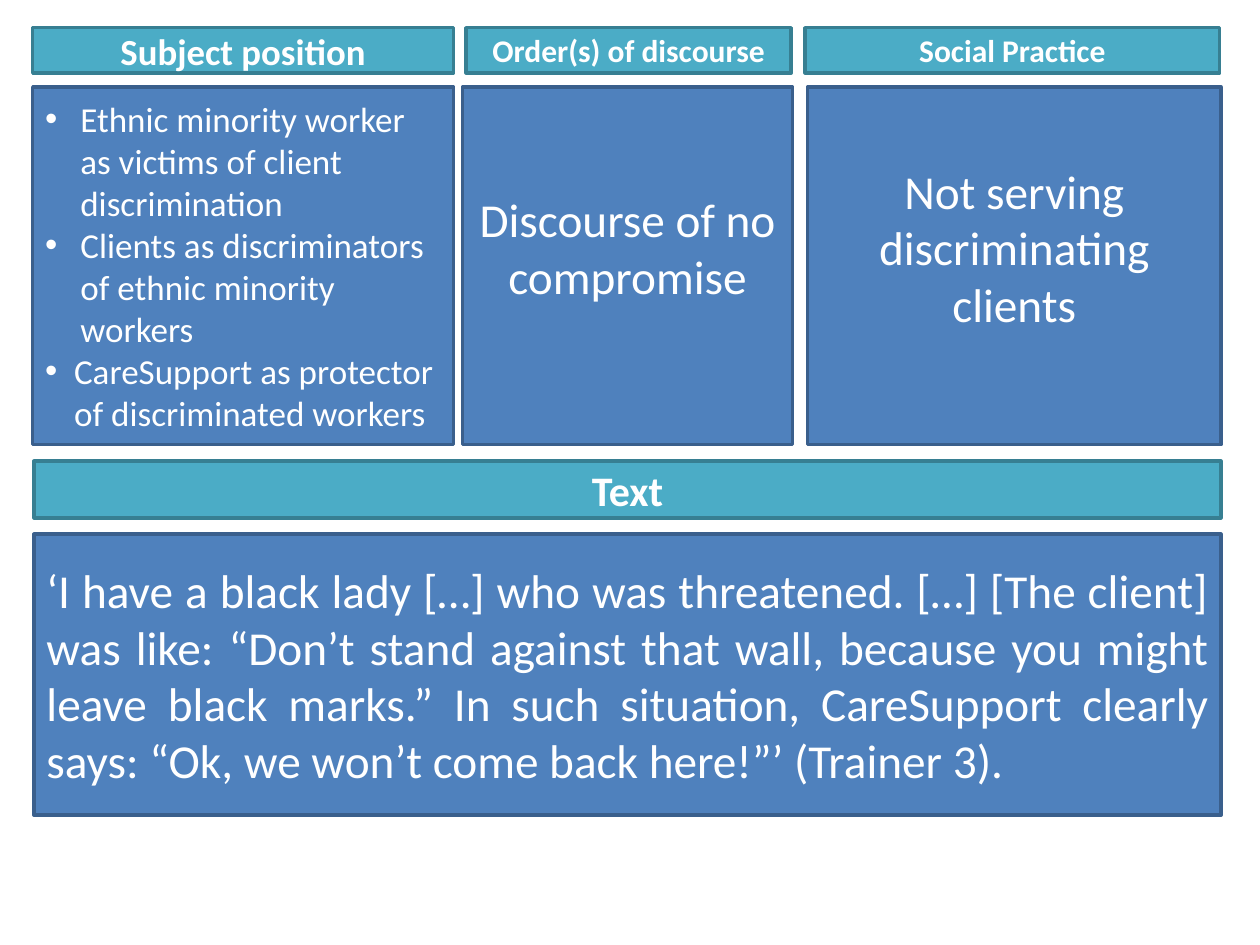
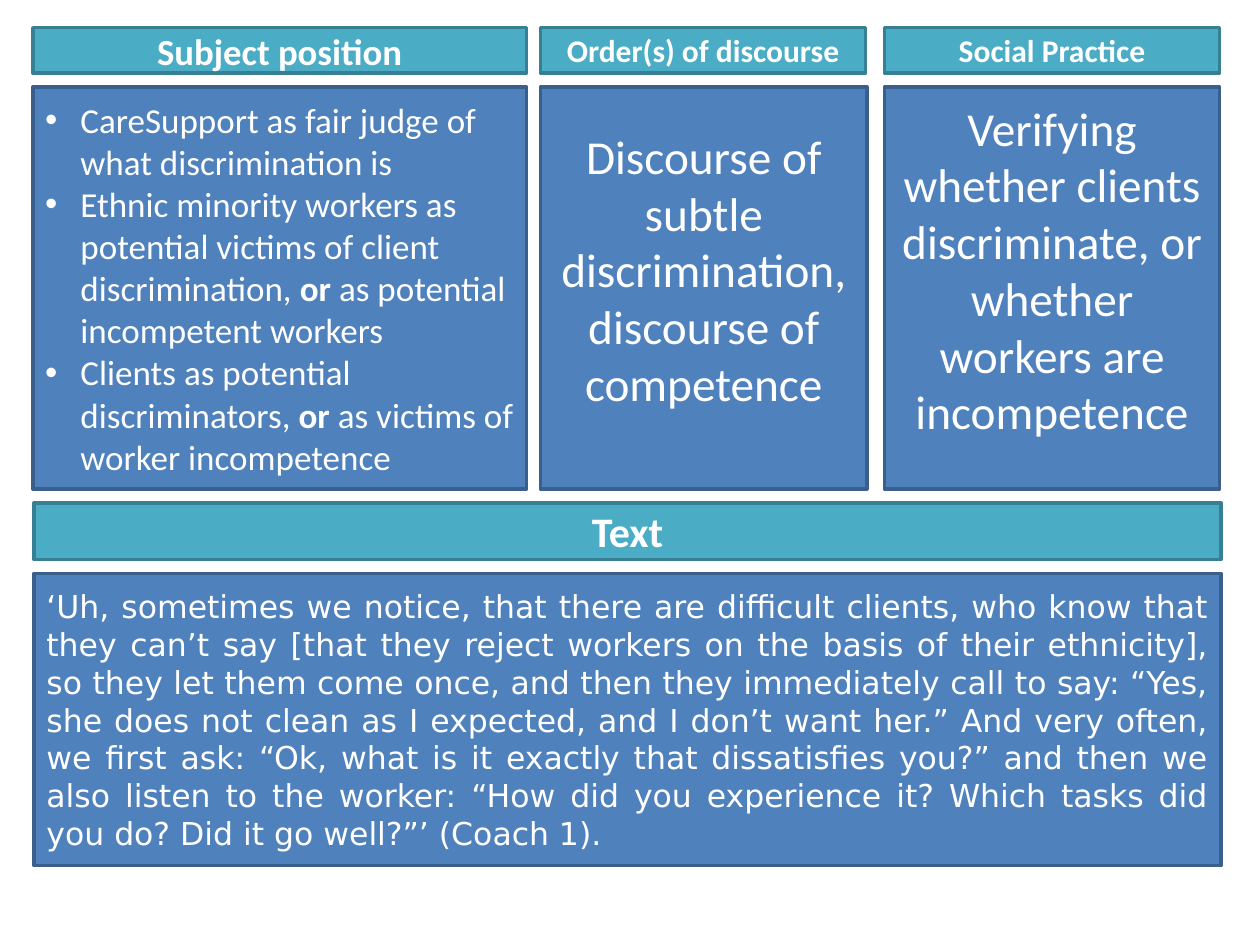
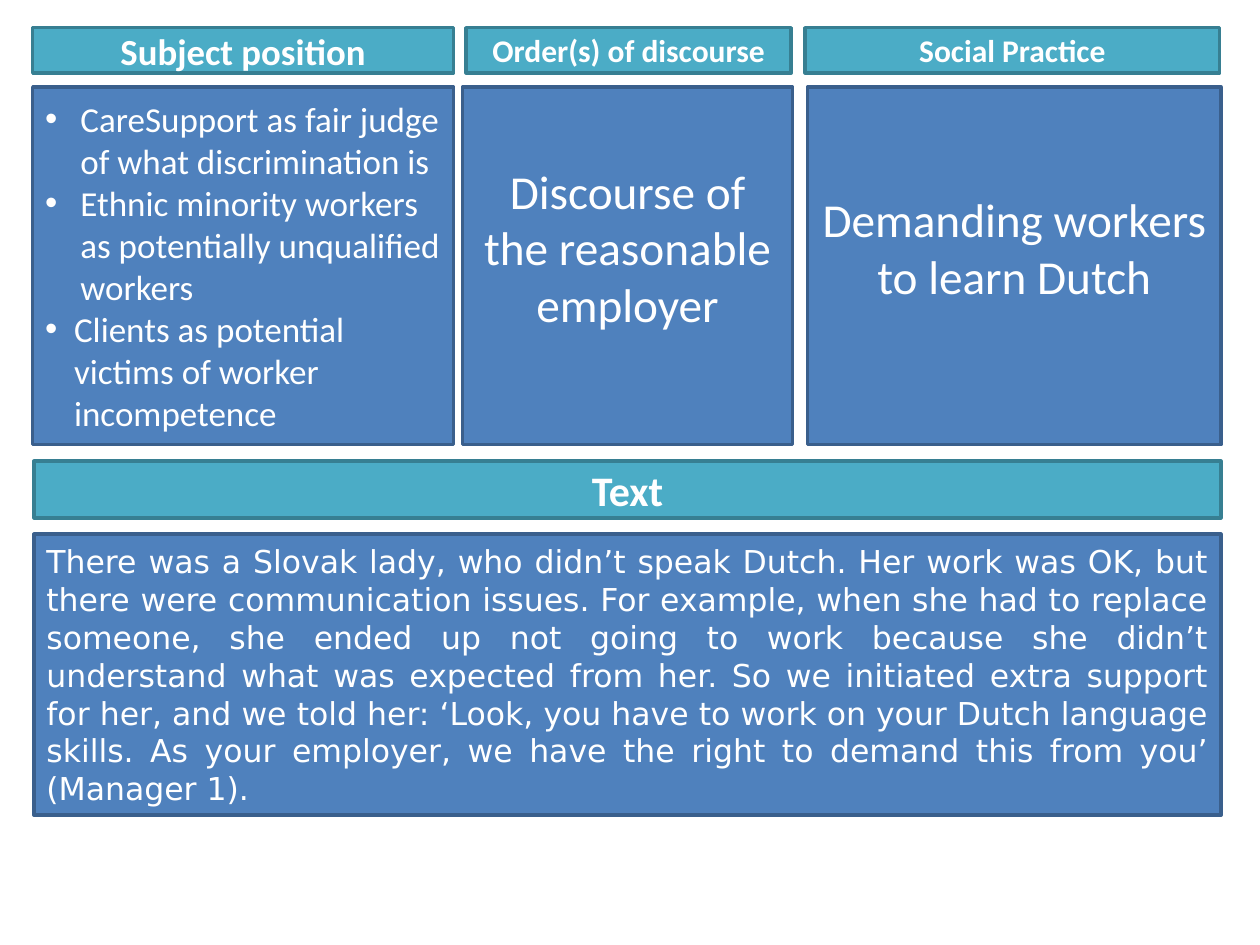
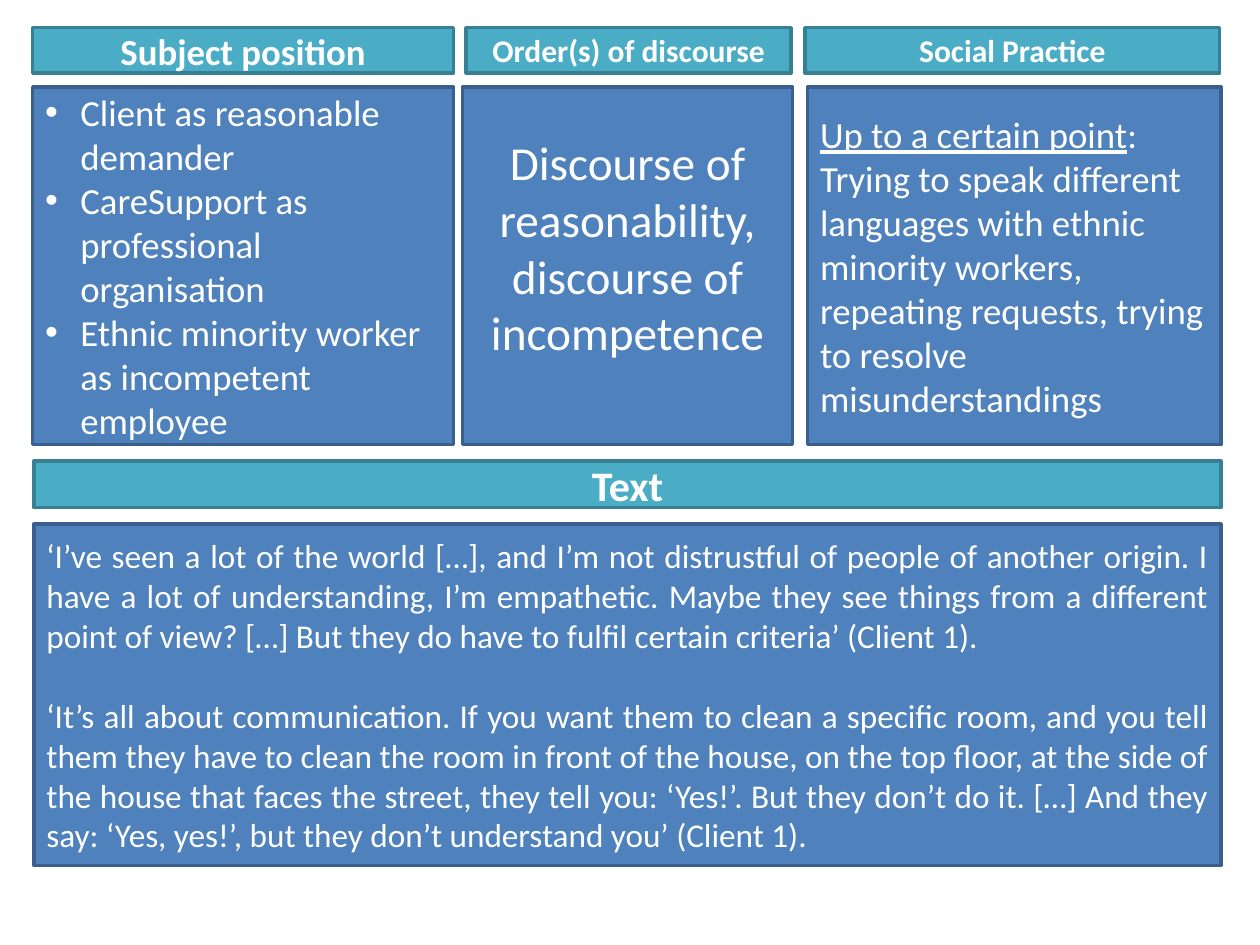
"""Build four slides that set subject positions beside discourse, practice and quotes."""
from dataclasses import dataclass

from lxml.etree import SubElement
from pptx import Presentation
from pptx.dml.color import RGBColor
from pptx.enum.shapes import MSO_SHAPE
from pptx.enum.text import MSO_ANCHOR, PP_ALIGN
from pptx.oxml.ns import qn
from pptx.util import Inches, Pt


@dataclass(frozen=True)
class Theme:
    white: str = "FFFFFF"
    blue: tuple = ("4F81BD", "3A5F8C")
    teal: tuple = ("4BACC6", "377F92")
    font: str = "Calibri"
    plain: str = "DejaVu Sans"
    line: float = 2
    small: int = 18
    dense: int = 19
    point: int = 20
    mid: int = 21
    big: int = 27
    bar: int = 24
    heads: tuple = (21, 18, 18)
    lift: float = 0.35


@dataclass(frozen=True)
class Grid:
    heads: tuple
    cells: tuple
    deep: float
    bar: tuple
    quote: tuple


HEADS = ("Subject position", "Order(s) of discourse", "Social Practice")
TOP, HIGH, BODY = 0.22, 0.36, 0.69
LEFT, WIDE = 0.27, 9.42
HANG, TIGHT = 0.28, 0.23

BASE = Grid(
    heads=((0.26, 3.34), (3.7, 2.58), (6.39, 3.29)),
    cells=((0.26, 3.34), (3.67, 2.62), (6.41, 3.28)),
    deep=2.84, bar=(3.66, 0.45), quote=(4.24, 2.23))
BROAD = Grid(
    heads=((0.26, 3.92), (4.29, 2.58), (7.02, 2.66)),
    cells=((0.26, 3.92), (4.29, 2.59), (7.02, 2.66)),
    deep=3.19, bar=(3.99, 0.45), quote=(4.55, 2.32))
LONG = Grid(BASE.heads, BASE.cells, BASE.deep, bar=(3.66, 0.37), quote=(4.16, 2.71))


class Deck:
    def __init__(self, theme):
        self.theme = theme
        self.show = Presentation()
        self.show.slide_width = Inches(10)
        self.show.slide_height = Inches(7.5)
        self.slide = None

    def start(self, grid):
        self.grid = grid
        self.slide = self.show.slides.add_slide(self.show.slide_layouts[6])
        for (left, wide), text, size in zip(grid.heads, HEADS, self.theme.heads):
            self.label(left, TOP, wide, HIGH, text, size)
        top, high = grid.bar
        self.label(LEFT, top, WIDE, high, "Text", self.theme.bar)

    def box(self, left, top, wide, high, tone):
        shape = self.slide.shapes.add_shape(
            MSO_SHAPE.RECTANGLE, Inches(left), Inches(top), Inches(wide), Inches(high))
        shape.shadow.inherit = False
        fill, edge = tone
        shape.fill.solid()
        shape.fill.fore_color.rgb = RGBColor.from_string(fill)
        shape.line.color.rgb = RGBColor.from_string(edge)
        shape.line.width = Pt(self.theme.line)
        frame = shape.text_frame
        frame.word_wrap = True
        frame.vertical_anchor = MSO_ANCHOR.MIDDLE
        return frame

    def put(self, frame, paras, size, align, font=None, bold=False, gap=0):
        for i, runs in enumerate(paras):
            para = frame.add_paragraph() if i else frame.paragraphs[0]
            para.alignment = align
            if i and gap:
                para.space_before = Pt(gap)
            for part in [runs] if isinstance(runs, str) else runs:
                text, mark = (part, "") if isinstance(part, str) else part
                run = para.add_run()
                run.text = text
                run.font.size = Pt(size)
                run.font.name = font or self.theme.font
                run.font.color.rgb = RGBColor.from_string(self.theme.white)
                run.font.bold = bold or mark == "bold"
                run.font.underline = mark == "under"

    def label(self, left, top, wide, high, text, size):
        frame = self.box(left, top, wide, high, self.theme.teal)
        self.put(frame, [text], size, PP_ALIGN.CENTER, bold=True)

    def cell(self, col):
        left, wide = self.grid.cells[col]
        return self.box(left, BODY, wide, self.grid.deep, self.theme.blue)

    def points(self, paras, size=None, last=HANG):
        frame = self.cell(0)
        self.put(frame, paras, size or self.theme.point, PP_ALIGN.LEFT)
        for para, hang in zip(frame.paragraphs, (HANG, HANG, last)):
            props = para._p.get_or_add_pPr()
            props.set("marL", str(Inches(hang)))
            props.set("indent", str(-Inches(hang)))
            SubElement(props, qn("a:buFont"), typeface="Arial")
            SubElement(props, qn("a:buChar"), char="•")

    def claim(self, col, text):
        frame = self.cell(col)
        frame.margin_bottom = Inches(self.theme.lift)
        self.put(frame, [text], self.theme.big, PP_ALIGN.CENTER)

    def note(self, col, runs):
        self.put(self.cell(col), [runs], self.theme.mid, PP_ALIGN.LEFT)

    def quote(self, paras, size, font=None, gap=0):
        top, high = self.grid.quote
        frame = self.box(LEFT, top, WIDE, high, self.theme.blue)
        self.put(frame, paras, size, PP_ALIGN.JUSTIFY, font, gap=gap)


def main():
    theme = Theme()
    deck = Deck(theme)

    deck.start(BASE)
    deck.points([
        "Ethnic minority worker as victims of client discrimination",
        "Clients as discriminators of ethnic minority workers",
        "CareSupport as protector of discriminated workers",
    ], last=TIGHT)
    deck.claim(1, "Discourse of no compromise")
    deck.claim(2, "Not serving discriminating clients")
    deck.quote([
        "‘I have a black lady […] who was threatened. […] [The client] was like: "
        "“Don’t stand against that wall, because you might leave black marks.” "
        "In such situation, CareSupport clearly says: “Ok, we won’t come back "
        "here!”’ (Trainer 3)."
    ], theme.big)

    deck.start(BROAD)
    deck.points([
        "CareSupport as fair judge of what discrimination is",
        ["Ethnic minority workers as potential victims of client discrimination, ",
         ("or", "bold"), " as potential incompetent workers"],
        ["Clients as potential discriminators, ",
         ("or", "bold"), " as victims of worker incompetence"],
    ])
    deck.claim(1, "Discourse of subtle discrimination, discourse of competence")
    deck.claim(2, "Verifying whether clients discriminate, or whether workers "
                  "are incompetence")
    deck.quote([
        "‘Uh, sometimes we notice, that there are difficult clients, who know that "
        "they can’t say [that they reject workers on the basis of their ethnicity], "
        "so they let them come once, and then they immediately call to say: “Yes, "
        "she does not clean as I expected, and I don’t want her.” And very often, "
        "we first ask: “Ok, what is it exactly that dissatisfies you?” and then we "
        "also listen to the worker: “How did you experience it? Which tasks did "
        "you do? Did it go well?”’ (Coach 1)."
    ], theme.small, theme.plain)

    deck.start(BASE)
    deck.points([
        "CareSupport as fair judge of what discrimination is",
        "Ethnic minority workers as potentially unqualified workers",
        "Clients as potential victims of worker incompetence",
    ], last=TIGHT)
    deck.claim(1, "Discourse of the reasonable employer")
    deck.claim(2, "Demanding workers to learn Dutch")
    deck.quote([
        "There was a Slovak lady, who didn’t speak Dutch. Her work was OK, but "
        "there were communication issues. For example, when she had to replace "
        "someone, she ended up not going to work because she didn’t understand "
        "what was expected from her. So we initiated extra support for her, and "
        "we told her: ‘Look, you have to work on your Dutch language skills. As "
        "your employer, we have the right to demand this from you’ (Manager 1)."
    ], theme.small, theme.plain)

    deck.start(LONG)
    deck.points([
        "Client as reasonable demander",
        "CareSupport as professional organisation",
        "Ethnic minority worker as incompetent employee",
    ], theme.mid)
    deck.claim(1, "Discourse of reasonability, discourse of incompetence")
    deck.note(2, [
        ("Up to a certain point", "under"),
        ": Trying to speak different languages with ethnic minority workers, "
        "repeating requests, trying to resolve misunderstandings"])
    deck.quote([
        "‘I’ve seen a lot of the world […], and I’m not distrustful of people of "
        "another origin. I have a lot of understanding, I’m empathetic. Maybe they "
        "see things from a different point of view? […] But they do have to fulfil "
        "certain criteria’ (Client 1).",
        "‘It’s all about communication. If you want them to clean a specific room, "
        "and you tell them they have to clean the room in front of the house, on "
        "the top floor, at the side of the house that faces the street, they tell "
        "you: ‘Yes!’. But they don’t do it. […] And they say: ‘Yes, yes!’, but they "
        "don’t understand you’ (Client 1)."
    ], theme.dense, gap=23)

    deck.show.save("out.pptx")


if __name__ == "__main__":
    main()
